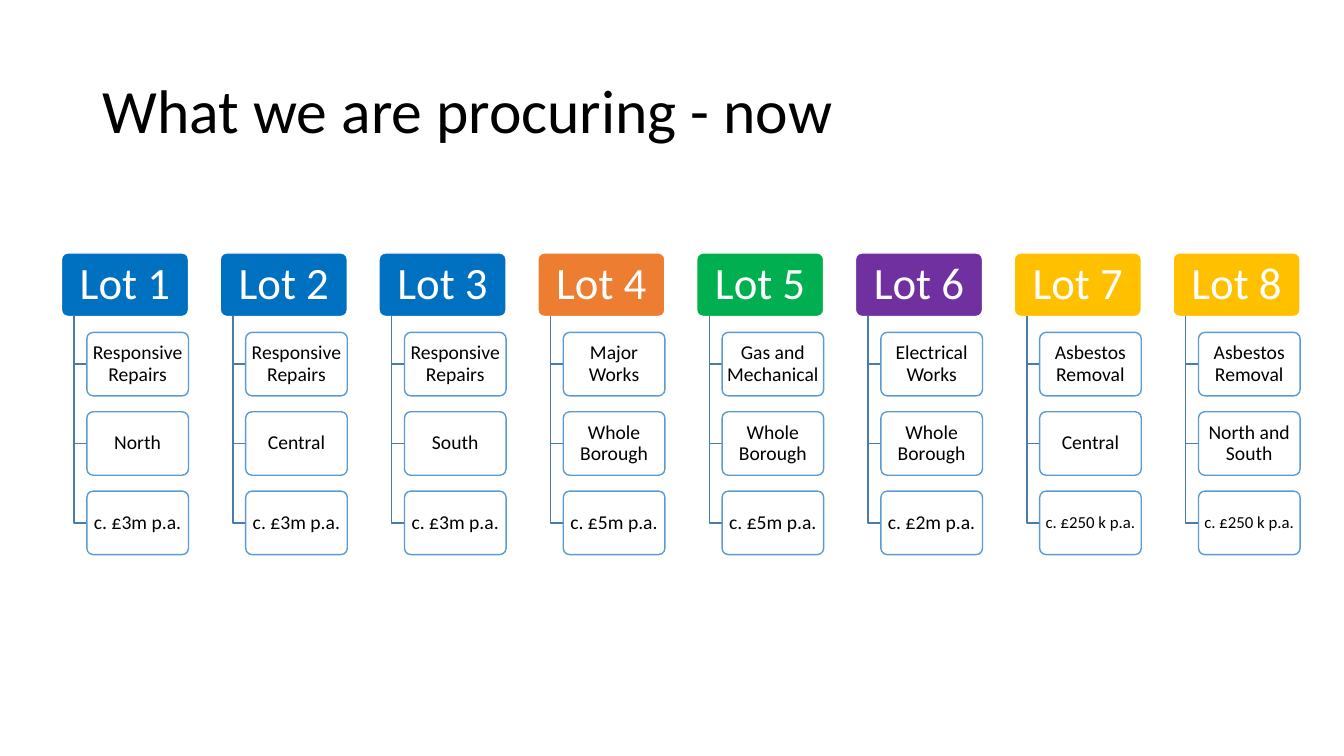
from lxml import etree
from pptx import Presentation
from pptx import util as u
from pptx.dml.color import RGBColor
from pptx.enum import shapes, text
from pptx.oxml import ns

BLACK = RGBColor(0x00, 0x00, 0x00)
WHITE = RGBColor(0xFF, 0xFF, 0xFF)
BLUE = RGBColor(0x00, 0x70, 0xC0)
ORANGE = RGBColor(0xED, 0x7D, 0x31)
GREEN = RGBColor(0x00, 0xB0, 0x50)
PURPLE = RGBColor(0x70, 0x30, 0xA0)
GOLD = RGBColor(0xFF, 0xC0, 0x00)
OUTLINE = RGBColor(0x5B, 0x9B, 0xD5)
BRANCH = RGBColor(0x49, 0x7C, 0xAB)

LEFT, TOP = 0.61, 2.51
WIDTH, HEIGHT = 1.26, 0.63
STEP = 1.25  # distance between boxes, in box widths or heights
TRUNK, INDENT = WIDTH / 10, WIDTH / 5

LOTS = [
    ("Lot 1", BLUE, ["Responsive Repairs", "North", "c. £3m p.a."]),
    ("Lot 2", BLUE, ["Responsive Repairs", "Central", "c. £3m p.a."]),
    ("Lot 3", BLUE, ["Responsive Repairs", "South", "c. £3m p.a."]),
    ("Lot 4", ORANGE, ["Major Works", "Whole Borough", "c. £5m p.a."]),
    ("Lot 5", GREEN, ["Gas and Mechanical", "Whole Borough", "c. £5m p.a."]),
    ("Lot 6", PURPLE, ["Electrical Works", "Whole Borough", "c. £2m p.a."]),
    ("Lot 7", GOLD, ["Asbestos Removal", "Central", "c. £250 k p.a."]),
    ("Lot 8", GOLD, ["Asbestos Removal", "North and South", "c. £250 k p.a."]),
]


def write(frame, words, size, color=BLACK, align=text.PP_ALIGN.CENTER, inset=(0.03, 0.02)):
    """Fill a text frame with one vertically centred paragraph."""
    frame.word_wrap = True
    frame.vertical_anchor = text.MSO_ANCHOR.MIDDLE
    frame.margin_left = frame.margin_right = u.Inches(inset[0])
    frame.margin_top = frame.margin_bottom = u.Inches(inset[1])
    para = frame.paragraphs[0]
    para.alignment = align
    para.line_spacing = 0.9
    span = para.add_run()
    span.text = words
    span.font.name = "Calibri"
    span.font.size = u.Pt(size)
    span.font.color.rgb = color


class LotSlide:
    def __init__(self, deck):
        self.page = deck.slides.add_slide(deck.slide_layouts[5])

    def title(self, words):
        box = self.page.shapes.title
        box.left, box.top = u.Inches(0.92), u.Inches(0.4)
        box.width, box.height = u.Inches(11.5), u.Inches(1.45)
        write(box.text_frame, words, 44, align=text.PP_ALIGN.LEFT, inset=(0.1, 0.05))

    def box(self, x, y, width, words, size, fill, line, opacity=100, **style):
        box = self.page.shapes.add_shape(
            shapes.MSO_SHAPE.ROUNDED_RECTANGLE,
            u.Inches(x), u.Inches(y), u.Inches(width), u.Inches(HEIGHT))
        box.adjustments[0] = 0.1
        box.shadow.inherit = False
        box.fill.solid()
        box.fill.fore_color.rgb = fill
        if opacity < 100:
            color = box.fill._xPr.find(".//" + ns.qn("a:srgbClr"))
            etree.SubElement(color, ns.qn("a:alpha"), val=str(opacity * 1000))
        box.line.color.rgb = line
        box.line.width = u.Pt(1)
        write(box.text_frame, words, size, **style)

    def branch(self, x, top, bottom, right):
        """Draw an elbow down from (x, top), then across to (right, bottom)."""
        outline = self.page.shapes.build_freeform(u.Inches(x), u.Inches(top))
        corners = [(x, bottom), (right, bottom)]
        outline.add_line_segments(
            [(u.Inches(a), u.Inches(b)) for a, b in corners], close=False)
        elbow = outline.convert_to_shape()
        elbow.shadow.inherit = False
        elbow.fill.background()
        elbow.line.color.rgb = BRANCH
        elbow.line.width = u.Pt(1)

    def lot(self, x, name, color, details):
        self.box(x, TOP, WIDTH, name, 32, color, WHITE, color=WHITE, inset=(0.07, 0.04))
        for row, words in enumerate(details, start=1):
            y = TOP + row * STEP * HEIGHT
            self.branch(x + TRUNK, TOP + HEIGHT, y + HEIGHT / 2, x + INDENT)
            size = 12 if "250 k" in words else 14
            self.box(x + INDENT, y, WIDTH - INDENT, words, size, WHITE, OUTLINE, opacity=90)


def main():
    deck = Presentation()
    deck.slide_width, deck.slide_height = u.Inches(13.33), u.Inches(7.5)
    slide = LotSlide(deck)
    slide.title("What we are procuring - now")
    for column, (name, color, details) in enumerate(LOTS):
        slide.lot(LEFT + column * STEP * WIDTH, name, color, details)
    deck.save("out.pptx")


if __name__ == "__main__":
    main()
